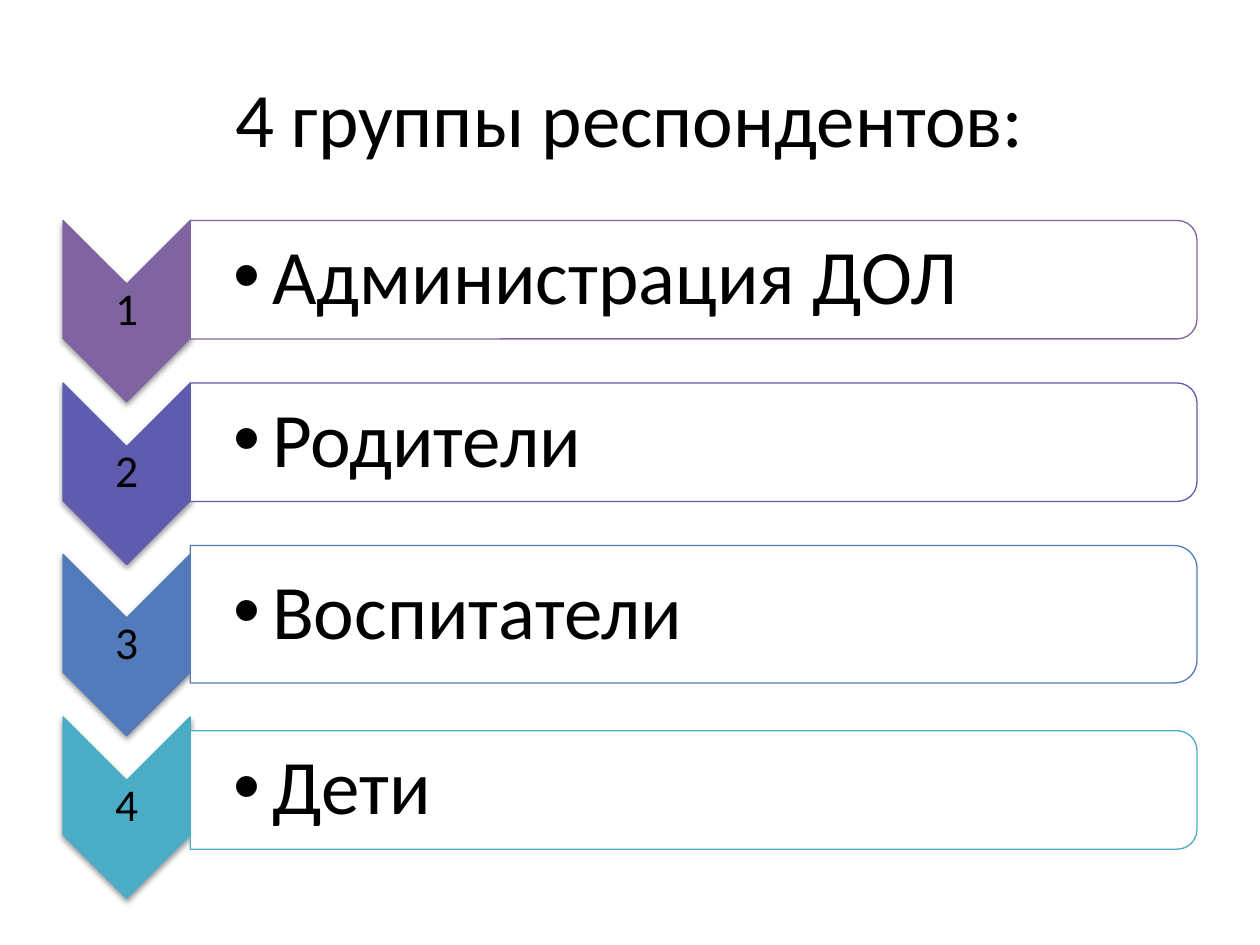
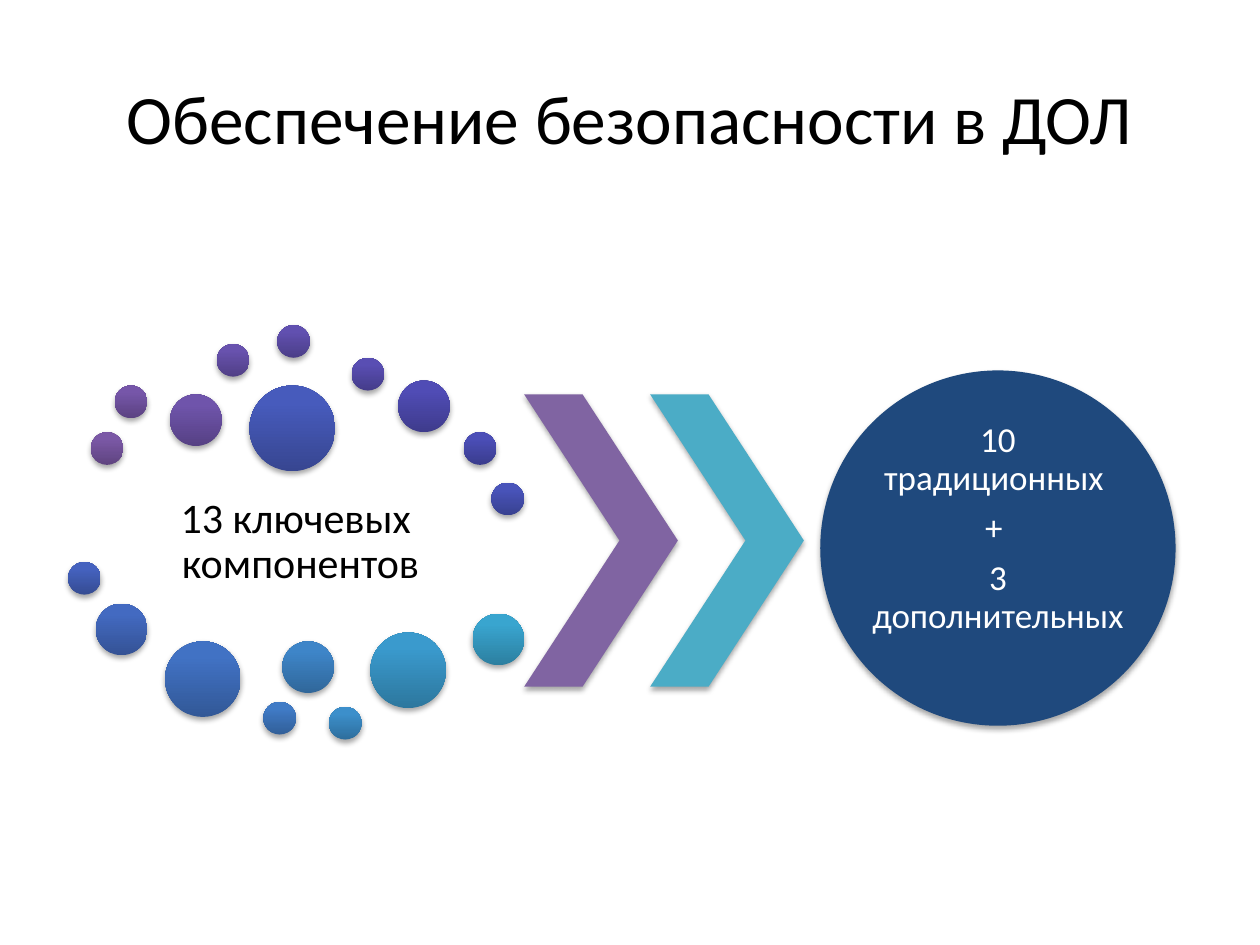
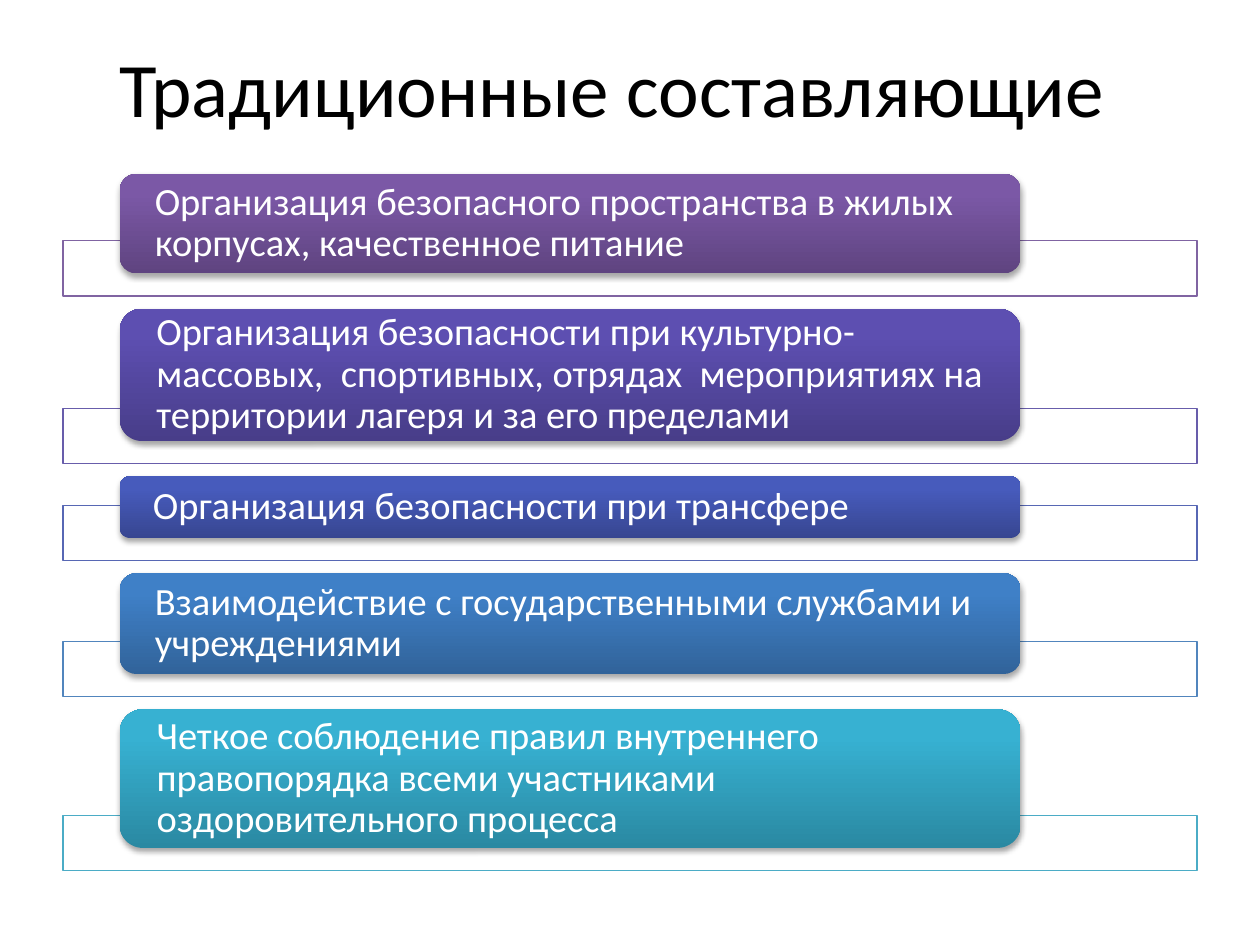
from lxml.etree import SubElement
from pptx import Presentation
from pptx.dml.color import RGBColor
from pptx.enum.shapes import MSO_SHAPE as Shape
from pptx.enum.text import MSO_ANCHOR as Anchor, PP_ALIGN as Align
from pptx.oxml.ns import qn
from pptx.util import Inches, Pt

FONT = "Calibri"
COLORS = {
    "black": "000000", "white": "FFFFFF", "navy": "1F497D",
    # Solid accents and outlines
    "purple": "8064A2", "iris": "5F5BAE", "steel": "537ABA", "aqua": "4BACC6",
    "iris line": "685DAB", "blue line": "5767B4", "sky line": "5185BD",
    # Light ends of the gradients
    "violet 1": "7B58A6", "violet 2": "7656A9", "violet 3": "6F54AB",
    "violet 4": "6852AE", "violet 5": "6150B0", "indigo 1": "5D4FB1",
    "indigo 2": "594EB3", "indigo 3": "504CB5", "indigo 4": "4B4EB7",
    "blue 1": "4954BA", "blue 2": "475BBC", "blue 3": "4562BF",
    "blue 4": "436AC1", "blue 5": "4172C4", "sky 1": "407BC6",
    "sky 2": "3F80C7", "sky 3": "3E85C8", "sky 4": "3C8FCB",
    "sky 5": "3A9ACD", "teal 1": "39A5CF", "teal 2": "37B1D2",
}
DARK_SHARE = 0.772  # brightness of a gradient's dark end


def rgb(name):
    return RGBColor.from_string(COLORS[name])


def inches(*lengths):
    return [Inches(length) for length in lengths]


def add_part(slide, kind, box, fill=None, gradient=None, line=None,
             alpha=None, shadow=None, turned=False):
    """Add a preset shape that covers box; a turned one is rotated by 90 degrees."""
    left, top, width, height = box
    if turned:
        left, top = left + (width - height) / 2, top + (height - width) / 2
        width, height = height, width
    part = slide.shapes.add_shape(kind, *inches(left, top, width, height))
    part.rotation = 90 if turned else 0
    if gradient:
        light = rgb(gradient)
        part.fill.gradient()
        part.fill.gradient_angle = 90
        dark_stop, light_stop = part.fill.gradient_stops
        dark_stop.color.rgb = RGBColor(*(round(c * DARK_SHARE) for c in light))
        light_stop.color.rgb = light
        dark_stop.position, light_stop.position = 0, 0.8
    else:
        part.fill.solid()
        part.fill.fore_color.rgb = rgb(fill)
    if line:
        part.line.color.rgb = rgb(line)
        part.line.width = Pt(0.75)
    else:
        part.line.fill.background()
    part.shadow.inherit = False
    properties = part.element.spPr
    if alpha:
        color = properties.find(qn("a:solidFill")).find(qn("a:srgbClr"))
        SubElement(color, qn("a:alpha"), val=str(alpha * 1000))
    if shadow:
        distance, opacity = shadow
        outer = SubElement(properties.find(qn("a:effectLst")), qn("a:outerShdw"),
                           blurRad="40000", dist=str(Pt(distance)),
                           dir="5400000", rotWithShape="0")
        color = SubElement(outer, qn("a:srgbClr"), val=COLORS["black"])
        SubElement(color, qn("a:alpha"), val=str(opacity * 1000))
    return part


def write(holder, lines, size, color="black", align=Align.CENTER,
          insets=(0, 0, 0, 0), spacing=0.9, after=0.35):
    frame = holder.text_frame
    frame.word_wrap = True
    frame.vertical_anchor = Anchor.MIDDLE
    (frame.margin_left, frame.margin_top,
     frame.margin_right, frame.margin_bottom) = inches(*insets)
    for index, line in enumerate(lines):
        paragraph = frame.add_paragraph() if index else frame.paragraphs[0]
        paragraph.text = line
        paragraph.alignment = align
        paragraph.line_spacing = spacing
        paragraph.space_after = Pt(round(size * after, 1))
        for run in paragraph.runs:
            run.font.name = FONT
            run.font.size = Pt(size)
            run.font.color.rgb = rgb(color)
    return frame


def add_text(slide, box, lines, size, **style):
    return write(slide.shapes.add_textbox(*inches(*box)), lines, size, **style)


def add_title(slide, text, box=(0.5, 0.3, 9, 1.25), size=44):
    add_text(slide, box, [text], size, insets=(0.1, 0.05, 0.1, 0.05),
             spacing=1.0, after=0)


# Slide 1: numbered chevrons with banners
def add_group_row(slide, box, number, name, color, banner_drop, banner_height):
    left, top, width, height = box
    chevron_width = 1.01
    add_part(slide, Shape.CHEVRON, (left, top, chevron_width, height), fill=color,
             line=color, shadow=(1.6, 38), turned=True)
    add_text(slide, (left, top + 0.5, chevron_width, 0.43), [str(number)], 26,
             insets=(0.02,) * 4)

    banner = (left + chevron_width, top + banner_drop,
              width - chevron_width, banner_height)
    add_part(slide, Shape.ROUND_2_SAME_RECTANGLE, banner, fill="white", line=color,
             alpha=90, turned=True)
    label = add_text(slide, banner, [name], 44, align=Align.LEFT,
                     insets=(0.34, 0.03, 0.03, 0.03), after=0.15)
    indent = Inches(0.31)
    properties = label.paragraphs[0]._p.get_or_add_pPr()
    properties.set("marL", str(indent))
    properties.set("indent", str(-indent))
    SubElement(properties, qn("a:buFont"), typeface="Arial")
    SubElement(properties, qn("a:buChar"), char="•")


def build_respondents(slide):
    add_title(slide, "4 группы респондентов:")
    groups = [  # name, colour, top, banner drop, banner height
        ("Администрация ДОЛ", "purple", 1.75, 0, 0.94),
        ("Родители", "iris", 3.04, 0, 0.94),
        ("Воспитатели", "steel", 4.4, -0.07, 1.09),
        ("Дети", "aqua", 5.69, 0.11, 0.94),
    ]
    for number, (name, color, top, drop, height) in enumerate(groups, 1):
        add_group_row(slide, (0.5, top, 9, 1.44), number, name, color, drop, height)


# Slide 2: cloud of dots, two chevrons, result circle
SOFT_SHADOW = (1.8, 35)
SMALL, MEDIUM, LARGE, LARGEST = 0.26, 0.41, 0.6, 0.68
DOTS = [  # left, top, diameter, colour
    (0.18, 0.85, SMALL, "violet 1"), (0.37, 0.48, SMALL, "violet 2"),
    (0.81, 0.55, MEDIUM, "violet 3"), (1.18, 0.15, SMALL, "violet 4"),
    (1.66, 0, SMALL, "violet 5"), (2.25, 0.26, SMALL, "indigo 2"),
    (2.62, 0.44, MEDIUM, "indigo 3"), (3.14, 0.85, SMALL, "indigo 4"),
    (3.36, 1.25, SMALL, "blue 1"), (1.44, 0.48, LARGEST, "blue 2"),
    (0, 1.88, SMALL, "blue 3"), (0.22, 2.21, MEDIUM, "blue 4"),
    (0.77, 2.51, LARGE, "blue 5"), (1.55, 2.99, SMALL, "sky 1"),
    (1.7, 2.51, MEDIUM, "sky 3"), (2.07, 3.03, SMALL, "sky 4"),
    (2.4, 2.44, LARGE, "sky 5"), (3.21, 2.29, MEDIUM, "teal 1"),
]


def add_component_cloud(slide, left, top):
    add_text(slide, (left + 0.19, top + 1.18, 3.31, 1.09),
             ["13 ключевых \nкомпонентов"], 24, insets=(0.03,) * 4)
    for x, y, diameter, color in DOTS:
        add_part(slide, Shape.OVAL, (left + x, top + y, diameter, diameter),
                 gradient=color, shadow=SOFT_SHADOW)


def add_chevron_pair(slide, left, top):
    for index, color in enumerate(("purple", "aqua")):
        chevron = add_part(slide, Shape.CHEVRON, (left + index, top, 1.22, 2.32),
                           fill=color, shadow=SOFT_SHADOW)
        chevron.adjustments[0] = 0.62


def add_result_circle(slide, left, top, diameter):
    circle = add_part(slide, Shape.OVAL, (left, top, diameter, diameter),
                      fill="navy", shadow=SOFT_SHADOW)
    write(circle, ["10 традиционных ", "+ ", "3 дополнительных  "], 20, "white")


def build_safety(slide):
    add_title(slide, "Обеспечение безопасности в ДОЛ", size=39.6)
    add_component_cloud(slide, 0.54, 2.58)
    add_chevron_pair(slide, 4.16, 3.13)
    add_result_circle(slide, 6.51, 2.94, 2.82)


# Slide 3: bars over outlined frames
def add_measure(slide, box, text, color, outline):
    left, top, width, height = box
    frame = (left, top + height - 0.26, width, 0.44)
    add_part(slide, Shape.RECTANGLE, frame, fill="white", line=outline, alpha=90)
    bar = add_part(slide, Shape.ROUNDED_RECTANGLE, (left + 0.45, top, 7.15, height),
                   gradient=color, shadow=SOFT_SHADOW)
    write(bar, [text], 22, "white", align=Align.LEFT, insets=(0.24, 0, 0.24, 0))


def build_traditional(slide):
    add_title(slide, "Традиционные составляющие ", (0.43, 0.21, 9, 0.95))
    measures = [  # text, gradient, outline, bar height
        ("Организация безопасного пространства в жилых корпусах, "
         "качественное питание", "violet 1", "purple", 0.79),
        ("Организация безопасности при культурно-массовых,  спортивных, отрядах  "
         "мероприятиях на территории лагеря и за его пределами",
         "indigo 1", "iris line", 1.05),
        ("Организация безопасности при трансфере", "blue 2", "blue line", 0.49),
        ("Взаимодействие с государственными службами и учреждениями",
         "sky 2", "sky line", 0.8),
        ("Четкое соблюдение правил внутреннего правопорядка всеми участниками "
         "оздоровительного процесса", "teal 2", "aqua", 1.1),
    ]
    top, gap = 1.38, 0.28
    for text, color, outline, height in measures:
        add_measure(slide, (0.5, top, 9, height), text, color, outline)
        top += height + gap


def main():
    deck = Presentation()
    deck.slide_width, deck.slide_height = inches(10, 7.5)
    blank = deck.slide_layouts[6]
    for build in (build_respondents, build_safety, build_traditional):
        build(deck.slides.add_slide(blank))
    deck.save("out.pptx")


if __name__ == "__main__":
    main()
